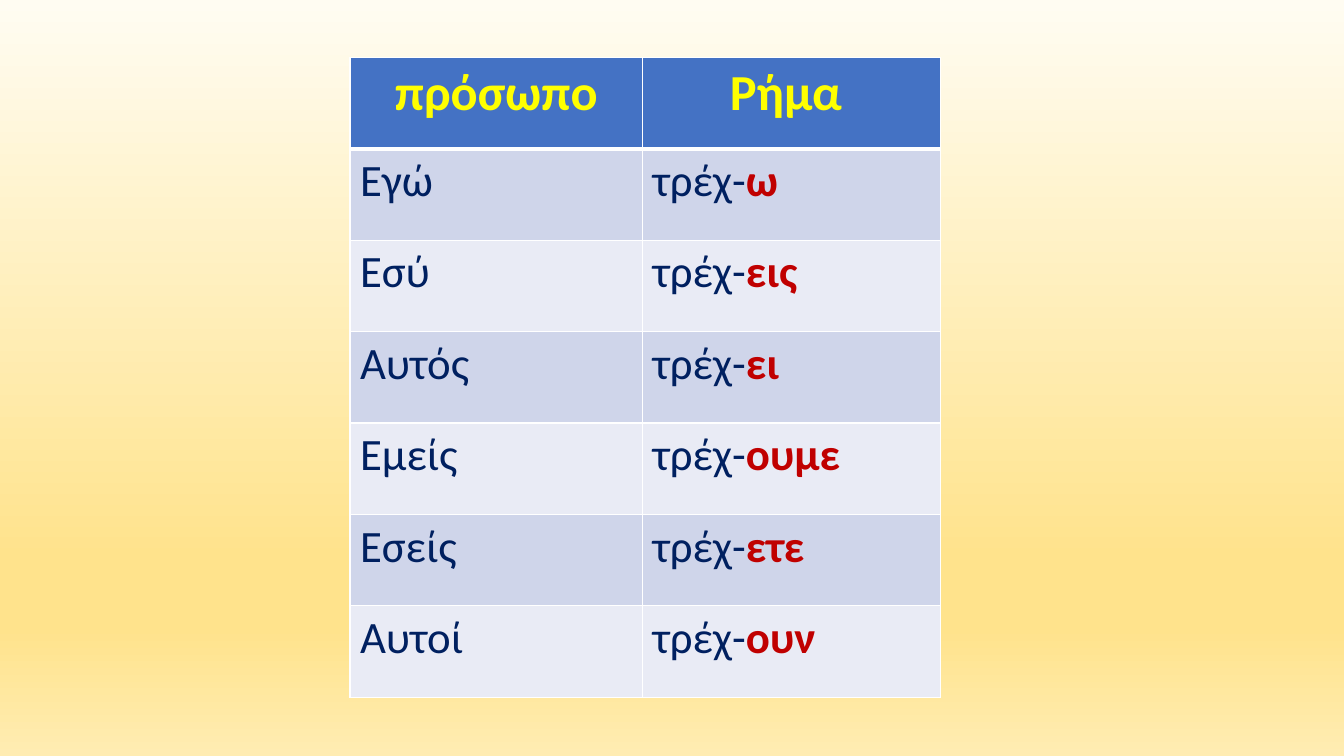
from lxml import etree
from pptx import Presentation
from pptx.dml.color import RGBColor
from pptx.enum import text
from pptx.oxml import ns
from pptx.util import Pt

COLORS = {
    "header": "4472C4", "band_dark": "CFD5EA", "band_light": "E9EBF5",
    "heading": "FFFF00", "stem": "002060", "ending": "C00000", "border": "FFFFFF",
}
BACKGROUND_STOPS = [(0, "FFFCF2"), (74, "FFE38C"), (83, "FFE38C"), (100, "FFECB2")]
HEADINGS = ["πρόσωπο", "Ρήμα "]
STEM = "τρέχ-"
VERB_FORMS = [("Εγώ", "ω"), ("Εσύ", "εις"), ("Αυτός", "ει"),
              ("Εμείς", "ουμε"), ("Εσείς", "ετε"), ("Αυτοί", "ουν")]
COLUMN_WIDTHS = [209, 213]
ROW_HEIGHT = 65.3


def rgb(name):
    """Return the named palette colour."""
    return RGBColor.from_string(COLORS[name])


def set_background(s):
    """Fill the slide with the vertical gradient."""
    fill = s.background.fill
    fill.gradient()
    fill.gradient_angle = 270
    stops = s.element.find(".//" + ns.qn("a:gsLst"))
    for stop in list(stops):
        stops.remove(stop)
    for position, color in BACKGROUND_STOPS:
        stop = etree.SubElement(stops, ns.qn("a:gs"), pos=str(position * 1000))
        etree.SubElement(stop, ns.qn("a:srgbClr"), val=color)


def set_borders(cell, top, bottom):
    """Draw white borders, with top and bottom widths in points."""
    tc_pr = cell._tc.get_or_add_tcPr()
    widths = {"lnL": 1, "lnR": 1, "lnT": top, "lnB": bottom}
    for i, (side, width) in enumerate(widths.items()):
        line = etree.Element(ns.qn("a:" + side), w=str(Pt(width)))
        solid = etree.SubElement(line, ns.qn("a:solidFill"))
        etree.SubElement(solid, ns.qn("a:srgbClr"), val=COLORS["border"])
        tc_pr.insert(i, line)


def fill_cell(cell, runs, size, fill, top=1, bottom=1, align=text.PP_ALIGN.LEFT):
    """Write (text, colour, bold) runs into a filled cell."""
    cell.fill.solid()
    cell.fill.fore_color.rgb = rgb(fill)
    set_borders(cell, top, bottom)
    p = cell.text_frame.paragraphs[0]
    p.alignment = align
    p.font.size = Pt(size)
    p.font.name = "Calibri"
    for content, color, bold in runs:
        r = p.add_run()
        r.text = content
        r.font.size = Pt(size)
        r.font.name = "Calibri"
        r.font.bold = bold
        r.font.color.rgb = rgb(color)


def add_verb_table(s):
    """Add the table of persons and verb forms."""
    rows = len(VERB_FORMS) + 1
    table = s.shapes.add_table(rows, len(HEADINGS), Pt(250), Pt(41),
                               Pt(sum(COLUMN_WIDTHS)), Pt(rows * ROW_HEIGHT)).table
    for column, width in zip(table.columns, COLUMN_WIDTHS):
        column.width = Pt(width)
    for row in table.rows:
        row.height = Pt(ROW_HEIGHT)
    for i, heading in enumerate(HEADINGS):
        fill_cell(table.cell(0, i), [(heading, "heading", True)], 36, "header",
                  bottom=3, align=text.PP_ALIGN.CENTER)
    for i, (person, ending) in enumerate(VERB_FORMS, 1):
        band = "band_dark" if i % 2 else "band_light"
        top = 3 if i == 1 else 1
        verb = [(STEM, "stem", False), (ending, "ending", True)]
        fill_cell(table.cell(i, 0), [(person, "stem", False)], 32, band, top)
        fill_cell(table.cell(i, 1), verb, 32, band, top)


def main():
    """Build and save the slide."""
    prs = Presentation()
    prs.slide_width, prs.slide_height = Pt(960), Pt(540)
    s = prs.slides.add_slide(prs.slide_layouts[6])
    set_background(s)
    add_verb_table(s)
    prs.save("out.pptx")


if __name__ == "__main__":
    main()
